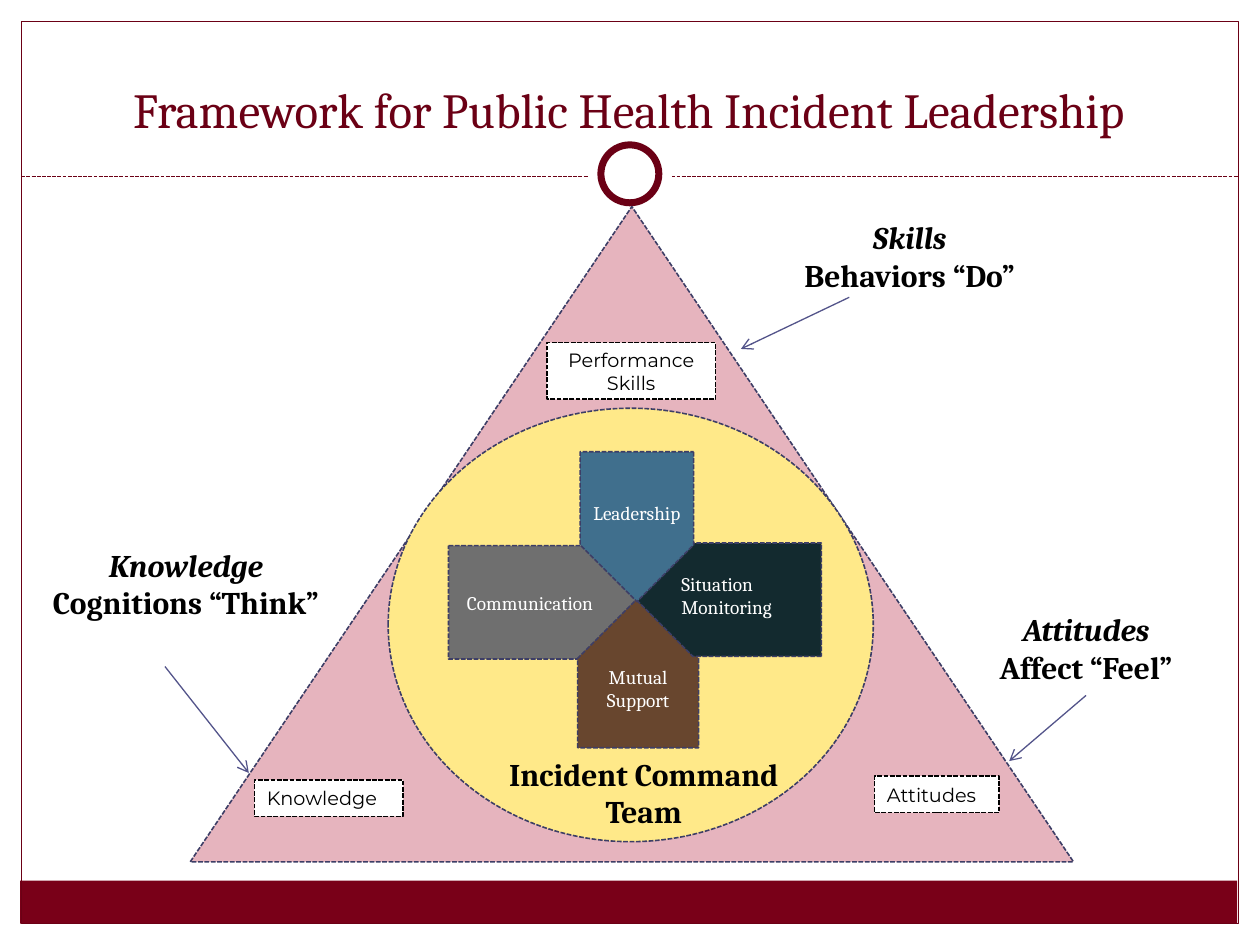
import pptx
import pptx.util
import pptx.dml.color
import pptx.enum.dml
import pptx.enum.shapes
import pptx.enum.text
import pptx.oxml.ns
from lxml import etree

Pt = pptx.util.Pt
Kind = pptx.enum.shapes.MSO_SHAPE
Align = pptx.enum.text.PP_ALIGN
Anchor = pptx.enum.text.MSO_ANCHOR
DASH = pptx.enum.dml.MSO_LINE.SQUARE_DOT
qn = pptx.oxml.ns.qn

WINE, EDGE, ARROW = "6B0015", "3D3E66", "53548A"
WHITE, BLACK = "FFFFFF", "000000"


def color(code):
    return pptx.dml.color.RGBColor.from_string(code)


def assign(target, values):
    for name, value in values.items():
        setattr(target, name, value)


class Deck:
    serif, sans = "Cambria", "Montserrat"
    small = {"size": Pt(11), "name": serif}
    label = {"size": Pt(11), "name": sans}
    strong = {"size": Pt(18), "name": serif, "bold": True}
    title = {"size": Pt(28), "name": serif}

    def __init__(self, width, height):
        self.prs = pptx.Presentation()
        assign(self.prs, {"slide_width": Pt(width), "slide_height": Pt(height)})
        self.slide = self.prs.slides.add_slide(self.prs.slide_layouts[6])

    def stroke(self, line, code, width, dash=False):
        line.color.rgb = color(code)
        line.width = Pt(width)
        if dash:
            line.dash_style = DASH

    def shape(self, kind, box, fill=None, line=None, width=0.9, dash=True, turn=0):
        item = self.slide.shapes.add_shape(kind, *map(Pt, box))
        item.shadow.inherit = False
        item.rotation = turn
        if fill:
            item.fill.solid()
            item.fill.fore_color.rgb = color(fill)
        else:
            item.fill.background()
        if line:
            self.stroke(item.line, line, width, dash)
        else:
            item.line.fill.background()
        return item

    def label_shape(self, item, lines, font, code, align=Align.CENTER,
                    anchor=Anchor.MIDDLE, slant=False, **frame):
        body = item.text_frame
        assign(body, {"word_wrap": True, "vertical_anchor": anchor, **frame})
        for i, text in enumerate(lines):
            para = body.add_paragraph() if i else body.paragraphs[0]
            para.alignment = align
            run = para.add_run()
            run.text = text
            assign(run.font, {**font, "italic": slant and i == 0})
            run.font.color.rgb = color(code)

    def text(self, box, lines, font, code, anchor=Anchor.TOP, **style):
        item = self.slide.shapes.add_textbox(*map(Pt, box))
        self.label_shape(item, lines, font, code, anchor=anchor, **style)

    def plate(self, box, fill, turn, text="", vert=None):
        item = self.shape(Kind.PENTAGON, box, fill, EDGE, turn=turn)
        if text:
            self.label_shape(item, [text], self.small, WHITE, margin_left=0,
                             margin_right=0, margin_top=0, margin_bottom=0)
        if vert:
            item._element.txBody.find(qn("a:bodyPr")).set("vert", vert)

    def tag(self, box, text, align=Align.LEFT):
        item = self.shape(Kind.RECTANGLE, box, WHITE, BLACK)
        self.label_shape(item, [text], self.label, BLACK, align)

    def line(self, start, end, code, dash=False, head=False):
        item = self.slide.shapes.add_connector(
            pptx.enum.shapes.MSO_CONNECTOR.STRAIGHT, *map(Pt, start + end))
        self.stroke(item.line, code, 0.75, dash)
        props = item._element.spPr
        if head:
            tip = etree.SubElement(props.find(qn("a:ln")), qn("a:tailEnd"))
            tip.set("type", "arrow")
        etree.SubElement(props, qn("a:effectLst"))


def main():
    deck = Deck(720, 540)

    # Frame, footer band and ring
    deck.shape(Kind.RECTANGLE, (11.5, 503.3, 695.5, 24.5), "790018")
    deck.shape(Kind.RECTANGLE, (12.2, 12.2, 695.5, 515.5), None, WINE, 0.75, False)
    deck.line((12.2, 100.8), (707.8, 100.8), WINE, dash=True)
    deck.shape(Kind.OVAL, (336, 75.6, 48, 48), WHITE)
    deck.shape(Kind.OVAL, (343.4, 82.8, 33.1, 33.1), WHITE, WINE, 4, False)

    # Title
    deck.text((17.3, 21.6, 684, 61.2),
              ["Framework for Public Health Incident Leadership"],
              deck.title, WINE, anchor=Anchor.BOTTOM)

    # Triangle and team circle
    deck.shape(Kind.ISOSCELES_TRIANGLE, (108.7, 118.1, 504.7, 374.4), "E6B4BE", EDGE)
    deck.shape(Kind.OVAL, (221.8, 233.3, 277.2, 247.7), "FFE989", EDGE)
    deck.text((278.6, 427.7, 178.6, 50), ["Incident Command Team"],
              deck.strong, BLACK)

    # Four plates that meet at the centre
    for plate in (
        ((256.3, 311.8, 109.4, 64.8), "6F6F6F", 0, "Communication"),
        ((321.8, 349.9, 85.7, 69.1), "68462E", 270, "Mutual Support", "vert"),
        ((363.6, 310.3, 105.8, 64.8), "132A2F", 180),
        ((321.1, 268.6, 85.7, 64.8), "406F8D", 90, "Leadership", "vert270"),
    ):
        deck.plate(*plate)
    deck.text((382.3, 323.3, 90.7, 36.7), ["Situation Monitoring"],
              deck.small, WHITE, align=Align.LEFT)

    # Corner headings, each with its arrow
    for box, lines, start, end in (
        ((536.4, 344.9, 168.5, 51.1), ["Attitudes", "Affect “Feel”"],
         (620.6, 397.4), (576.7, 434.9)),
        ((16.6, 308.2, 179.3, 72.7), ["Knowledge", "Cognitions “Think”"],
         (94.3, 380.9), (142.2, 441.7)),
        ((450.7, 121, 138.2, 72.7), ["Skills", "Behaviors “Do”"],
         (485.3, 169.9), (423.4, 199.4)),
    ):
        deck.text(box, lines, deck.strong, BLACK, slant=True)
        deck.line(start, end, ARROW, head=True)

    # Corner tags
    deck.tag((499.7, 443.5, 71.3, 20.9), "Attitudes")
    deck.tag((145.4, 445.7, 85, 20.9), "Knowledge")
    deck.tag((312.5, 195.8, 96.5, 32.4), "Performance Skills", Align.CENTER)

    deck.prs.save("out.pptx")


if __name__ == "__main__":
    main()
